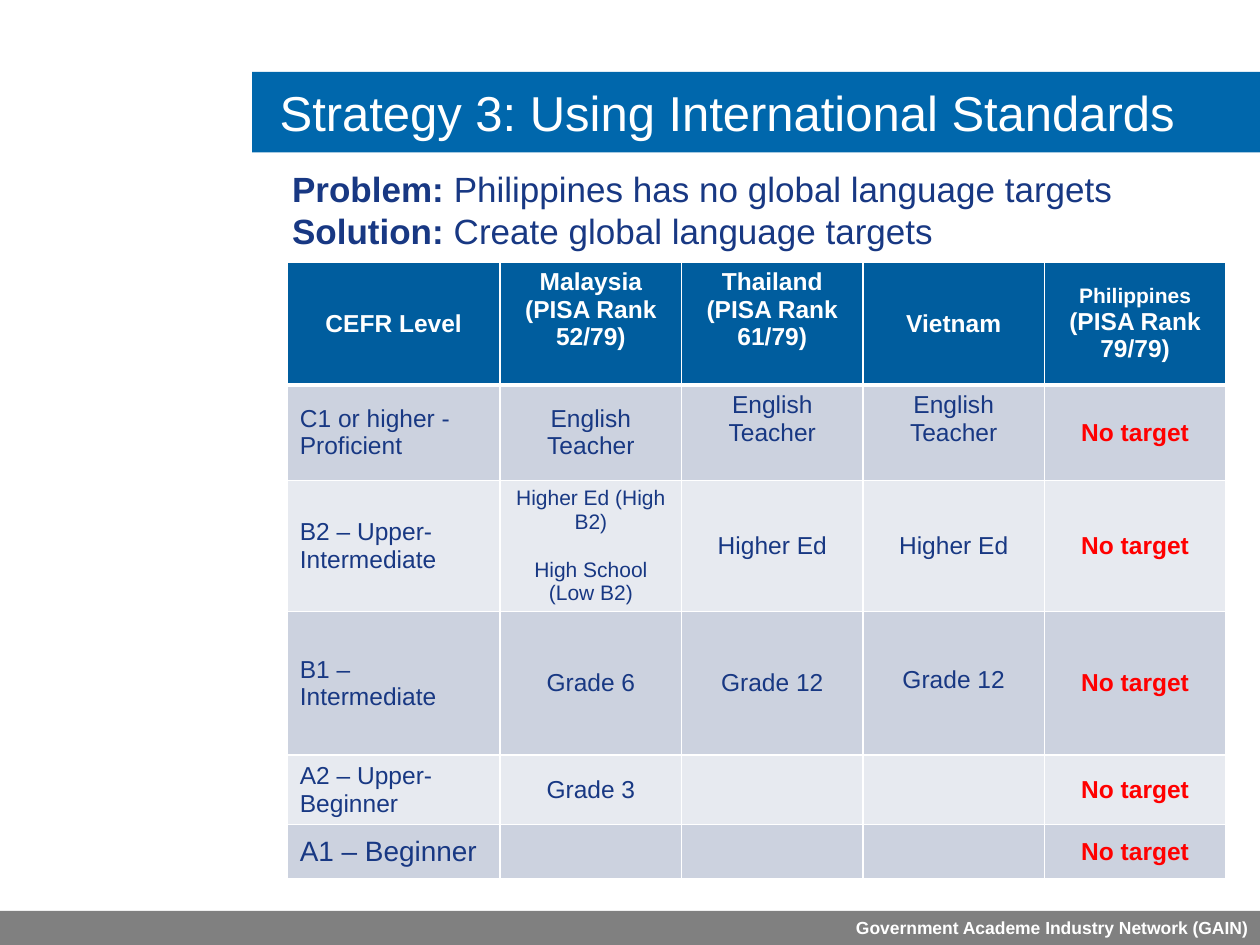
"""Build the slide on international language standards with its CEFR table."""
from lxml.etree import SubElement
from pptx import Presentation
from pptx.dml.color import RGBColor
from pptx.enum.shapes import MSO_SHAPE as Shape
from pptx.enum.text import MSO_ANCHOR as Anchor, MSO_AUTO_SIZE as Fit, PP_ALIGN as Align
from pptx.oxml.ns import qn
from pptx.util import Inches, Pt

COLORS = {"white": "FFFFFF", "title": "0067AC", "header": "005D9E", "dark_band": "CCD2DF",
          "light_band": "E7EAF0", "navy": "183883", "red": "FF0000", "footer": "808080"}
COLUMN_WIDTHS = [1.69] + [1.44] * 4
ROW_HEIGHTS = [0.97, 0.75, 1.03, 1.14, 0.55, 0.43]
ROWS = [
    ["CEFR Level", "Malaysia\n(PISA Rank 52/79)", "Thailand\n(PISA Rank 61/79)", "Vietnam",
     "Philippines\n(PISA Rank 79/79)"],
    ["C1 or higher - Proficient"] + ["English Teacher"] * 3 + ["No target"],
    ["B2 – Upper-Intermediate", "Higher Ed (High B2)\nHigh School (Low B2)",
     "Higher Ed", "Higher Ed", "No target"],
    ["B1 – Intermediate", "Grade 6", "Grade 12", "Grade 12", "No target"],
    ["A2 – Upper-Beginner", "Grade 3", "", "", "No target"],
    ["A1 – Beginner", "", "", "", "No target"],
]
TEXT_SIZES = {(0, 4): [12, 14], (2, 1): [12, 12], (5, 0): [16]}
SPACE_BEFORE = {(2, 1): 14}
BOTTOM_MARGINS = {(0, 1): 0.27, (0, 2): 0.27, (1, 2): 0.27, (1, 3): 0.27, (3, 3): 0.11}


def rgb(name):
    """Return the named colour."""
    return RGBColor.from_string(COLORS[name])


class SlideBuilder:
    """Hold the style and the current slide."""

    font_name = "Arial"

    def __init__(self, deck):
        """Add a title-only slide to the deck."""
        self.slide = deck.slides.add_slide(deck.slide_layouts[5])

    def style(self, target, **values):
        """Set attributes from a dict of format values."""
        for name, value in values.items():
            setattr(target, name, value)

    def add_span(self, para, text, size, color, bold=False):
        """Add a styled span to a paragraph."""
        span = para.add_run()
        span.text = text
        self.style(span.font, name=self.font_name, size=Pt(size), bold=bold)
        span.font.color.rgb = rgb(color)

    def fill(self, target, color):
        """Give a shape or cell a solid fill."""
        target.fill.solid()
        target.fill.fore_color.rgb = rgb(color)

    def title(self, text, left, top, width, height):
        """Fill the title placeholder."""
        box = self.slide.shapes.title
        self.style(box, left=Inches(left), top=Inches(top),
                   width=Inches(width), height=Inches(height))
        self.fill(box, "title")
        frame = box.text_frame
        self.style(frame, auto_size=Fit.NONE, word_wrap=True, vertical_anchor=Anchor.MIDDLE,
                   margin_left=Inches(0.22))
        para = frame.paragraphs[0]
        para.alignment = Align.LEFT
        self.add_span(para, text, 28, "white")

    def footer(self, text, left, top, width, height):
        """Draw the footer band."""
        band = self.slide.shapes.add_shape(
            Shape.RECTANGLE, Inches(left), Inches(top), Inches(width), Inches(height))
        band.shadow.inherit = False
        band.line.fill.background()
        self.fill(band, "footer")
        self.style(band.text_frame, word_wrap=True, vertical_anchor=Anchor.MIDDLE)
        para = band.text_frame.paragraphs[0]
        para.alignment = Align.RIGHT
        self.add_span(para, text, 10, "white", True)

    def statements(self, pairs, left, top, width, height):
        """Add lines that each open with a bold label."""
        box = self.slide.shapes.add_textbox(
            Inches(left), Inches(top), Inches(width), Inches(height))
        frame = box.text_frame
        frame.word_wrap = False
        for index, (label, text) in enumerate(pairs):
            para = frame.add_paragraph() if index else frame.paragraphs[0]
            self.add_span(para, label, 20, "navy", True)
            self.add_span(para, text, 20, "navy")

    def borders(self, cell, row):
        """Draw white borders, thick under the header row."""
        widths = {"L": 1, "R": 1, "T": 3 if row == 1 else 1, "B": 3 if row == 0 else 1}
        properties = cell._tc.get_or_add_tcPr()
        for side, width in widths.items():
            line = SubElement(properties, qn(f"a:ln{side}"), w=str(Pt(width)))
            solid = SubElement(line, qn("a:solidFill"))
            SubElement(solid, qn("a:srgbClr"), val=COLORS["white"])

    def cell(self, cell, row, column, text):
        """Style one table cell and add its lines."""
        place = (row, column)
        last = column == len(COLUMN_WIDTHS) - 1
        self.borders(cell, row)
        self.fill(cell, "header" if row == 0 else "dark_band" if row % 2 else "light_band")
        self.style(cell, vertical_anchor=Anchor.MIDDLE,
                   margin_bottom=Inches(BOTTOM_MARGINS.get(place, 0.05)))
        if not text:
            return
        color = "white" if row == 0 else "red" if last else "navy"
        lines = text.split("\n")
        sizes = TEXT_SIZES.get(place, [14] * len(lines))
        for index, (line, size) in enumerate(zip(lines, sizes)):
            para = cell.text_frame.add_paragraph() if index else cell.text_frame.paragraphs[0]
            para.alignment = Align.LEFT if row and column == 0 else Align.CENTER
            if index:
                para.space_before = Pt(SPACE_BEFORE.get(place, 0))
            self.add_span(para, line, size, color, row == 0 or last)

    def table(self, rows, left, top):
        """Add the table of targets by level and country."""
        table = self.slide.shapes.add_table(
            len(rows), len(COLUMN_WIDTHS), Inches(left), Inches(top),
            Inches(sum(COLUMN_WIDTHS)), Inches(sum(ROW_HEIGHTS))).table
        for column, width in zip(table.columns, COLUMN_WIDTHS):
            column.width = Inches(width)
        for row, height in zip(table.rows, ROW_HEIGHTS):
            row.height = Inches(height)
        for row, texts in enumerate(rows):
            for column, text in enumerate(texts):
                self.cell(table.cell(row, column), row, column, text)


def main():
    """Build and save the deck."""
    deck = Presentation()
    deck.slide_width, deck.slide_height = Inches(10), Inches(7.5)
    page = SlideBuilder(deck)
    page.footer("Government Academe Industry Network (GAIN)", 0, 7.23, 10, 0.27)
    page.title("Strategy 3: Using International Standards", 2, 0.57, 8, 0.64)
    page.table(ROWS, 2.28, 2.08)
    page.statements([("Problem: ", "Philippines has no global language targets"),
                     ("Solution: ", "Create global language targets")], 2.22, 1.28, 6.77, 0.77)
    deck.save("out.pptx")


if __name__ == "__main__":
    main()
